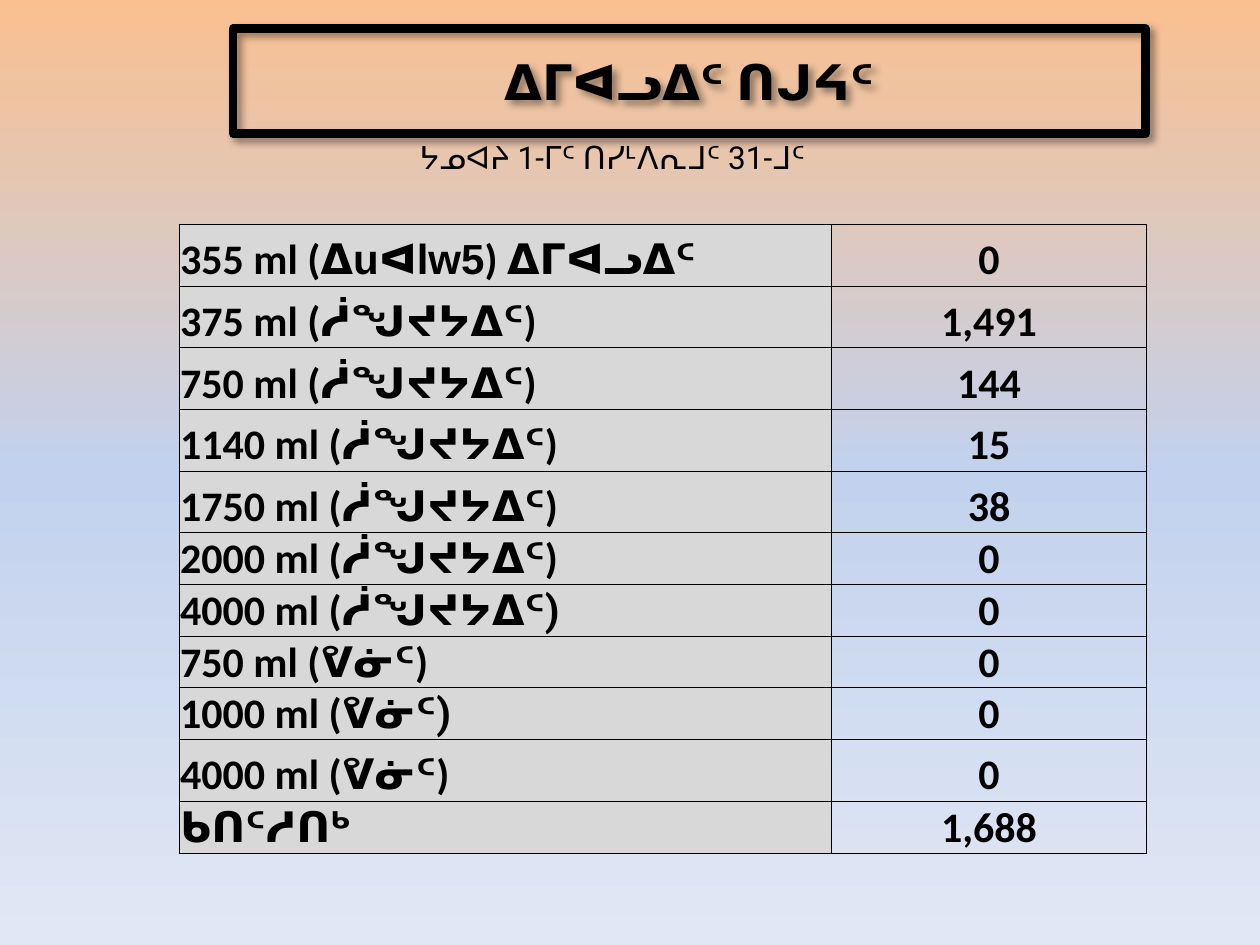
import pptx
import pptx.dml.color
import pptx.enum.text
import pptx.oxml
import pptx.oxml.ns
import pptx.util
from pptx.util import Inches

BLACK = pptx.dml.color.RGBColor(0x00, 0x00, 0x00)
LABEL_GREY = pptx.dml.color.RGBColor(0xD8, 0xD8, 0xD8)
BACKGROUND_STOPS = [(0, "FAC090"), (50000, "C2D1ED"), (100000, "E1E8F5")]
CENTER = pptx.enum.text.PP_ALIGN.CENTER
LEFT = pptx.enum.text.PP_ALIGN.LEFT
NAMESPACE = pptx.oxml.ns.nsdecls("a")


def add_text(para, text, font="Calibri", size=24, bold=True, align=LEFT):
    para.alignment = align
    span = para.add_run()
    span.text = text
    span.font.name = font
    span.font.size = pptx.util.Pt(size)
    span.font.bold = bold
    span.font.color.rgb = BLACK


deck = pptx.Presentation()
deck.slide_width = Inches(10)
deck.slide_height = Inches(7.5)
page = deck.slides.add_slide(deck.slide_layouts[5])

background = page.background.fill
background.gradient()
background.gradient_angle = 270
stop_list = page.element.find(".//" + pptx.oxml.ns.qn("a:gsLst"))
for stop in list(stop_list):
    stop_list.remove(stop)
for position, color in BACKGROUND_STOPS:
    stop_list.append(pptx.oxml.parse_xml(
        f'<a:gs {NAMESPACE} pos="{position}"><a:srgbClr val="{color}"/></a:gs>'))

title = page.shapes.title
title.left, title.top = Inches(1.85), Inches(0.36)
title.width, title.height = Inches(7.24), Inches(0.57)
title.fill.background()
title.line.color.rgb = BLACK
title.line.width = pptx.util.Pt(5)
title.element.spPr.append(pptx.oxml.parse_xml(
    f'<a:effectLst {NAMESPACE}><a:outerShdw blurRad="50800" dist="38100" dir="2700000" '
    'algn="tl" rotWithShape="0"><a:srgbClr val="000000"><a:alpha val="40000"/>'
    '</a:srgbClr></a:outerShdw></a:effectLst>'))
title.text_frame.word_wrap = True
title.text_frame.auto_size = pptx.enum.text.MSO_AUTO_SIZE.SHAPE_TO_FIT_TEXT
add_text(title.text_frame.paragraphs[0], "ᐃᒥᐊᓗᐃᑦ ᑎᒍᔦᑦ",
         font="Roboto", size=28, align=CENTER)

period_box = page.shapes.add_textbox(Inches(1.85), Inches(1.05), Inches(6.08), Inches(0.4))
period_box.text_frame.word_wrap = True
period_box.text_frame.auto_size = pptx.enum.text.MSO_AUTO_SIZE.SHAPE_TO_FIT_TEXT
add_text(period_box.text_frame.paragraphs[0], "ᔭᓄᐊᔨ 1-ᒥᑦ ᑎᓯᒻᐱᕆᒧᑦ 31-ᒧᑦ ",
         font="Roboto", size=18, bold=False, align=CENTER)

TALL, SHORT = 0.49, 0.41
SPIRITS, WINE = "ᓲᖑᔪᔭᐃᑦ", "ᕓᓃᑦ"
CLOSING = (")", "Calibri")
rows = [(TALL, [("355 ml (", "Calibri"), ("ᐃ", "Roboto"), ("uᐊlw5", "Arial"),
                (") ᐃᒥᐊᓗᐃᑦ", "Calibri")], "0")]
for height, volume, drink, count in [
    (TALL, 375, SPIRITS, "1,491"),
    (TALL, 750, SPIRITS, "144"),
    (TALL, 1140, SPIRITS, "15"),
    (TALL, 1750, SPIRITS, "38"),
    (SHORT, 2000, SPIRITS, "0"),
    (SHORT, 4000, SPIRITS, "0"),
    (SHORT, 750, WINE, "0"),
    (SHORT, 1000, WINE, "0"),
    (TALL, 4000, WINE, "0"),
]:
    rows.append((height, [(f"{volume} ml (", "Calibri"), (drink, "Roboto"), CLOSING], count))
rows[6][1][1:] = [(SPIRITS + ")", "Roboto")]
rows[8][1][1:] = [(WINE + ")", "Roboto")]
rows.append((SHORT, [("ᑲᑎᑦᓱᑎᒃ", "Roboto")], "1,688"))

table = page.shapes.add_table(len(rows), 2, Inches(1.42), Inches(1.78),
                              Inches(7.68), Inches(4.98)).table
table.first_row = False
table.horz_banding = False
table.columns[0].width = Inches(5.18)
table.columns[1].width = Inches(2.5)

for index, (height, label, count) in enumerate(rows):
    table.rows[index].height = Inches(height)
    label_cell, count_cell = table.cell(index, 0), table.cell(index, 1)
    for cell in (label_cell, count_cell):
        cell.vertical_anchor = pptx.enum.text.MSO_ANCHOR.BOTTOM
        cell.margin_left = cell.margin_right = cell.margin_top = Inches(0.01)
        cell.margin_bottom = 0
        properties = cell._tc.get_or_add_tcPr()
        for side in ("lnL", "lnR", "lnT", "lnB"):
            properties.append(pptx.oxml.parse_xml(
                f'<a:{side} {NAMESPACE} w="6350"><a:solidFill><a:srgbClr val="000000"/>'
                f'</a:solidFill></a:{side}>'))
    label_cell.fill.solid()
    label_cell.fill.fore_color.rgb = LABEL_GREY
    count_cell.fill.background()
    for text, font in label:
        add_text(label_cell.text_frame.paragraphs[0], text, font=font)
    add_text(count_cell.text_frame.paragraphs[0], count, align=CENTER)

deck.save("out.pptx")
